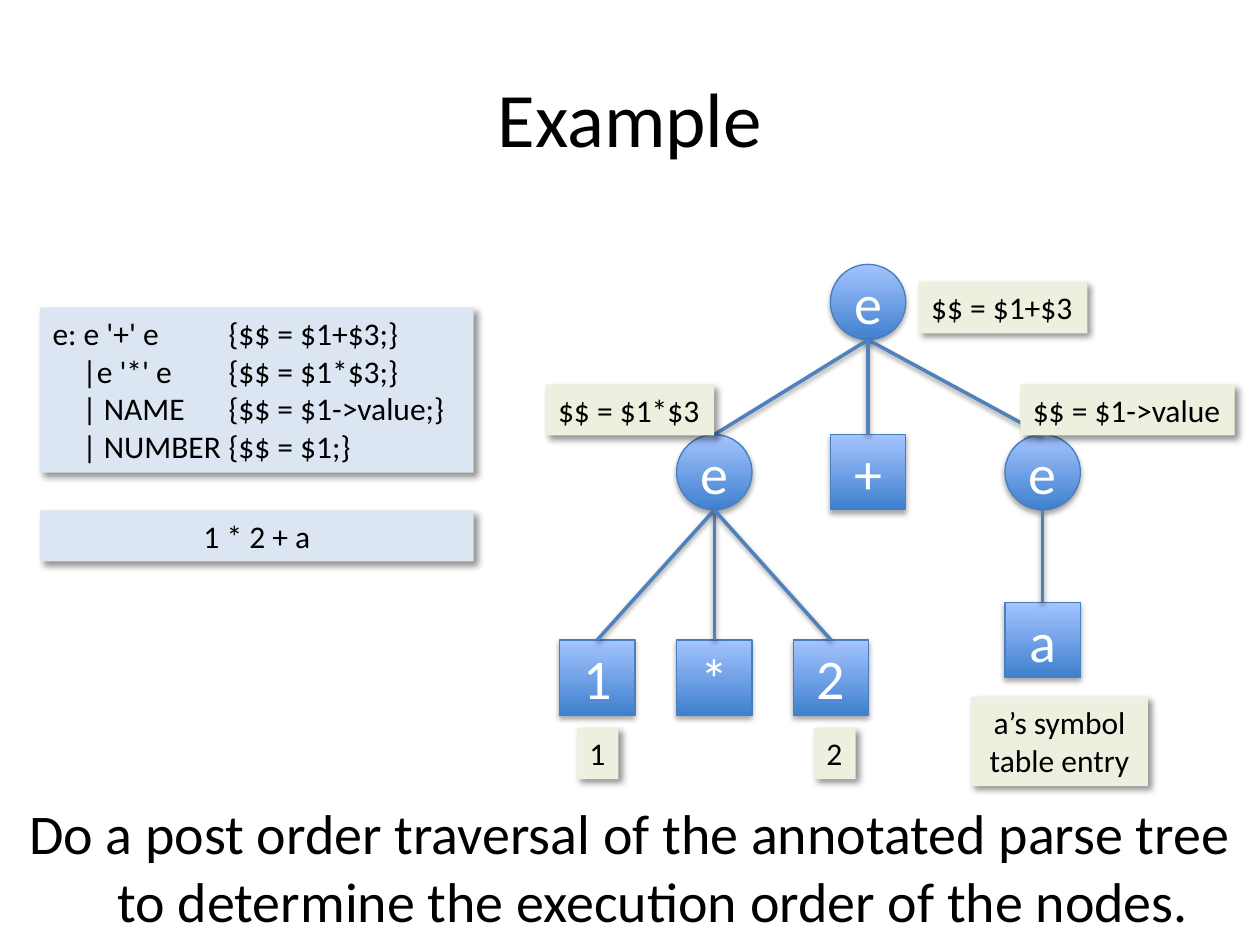
from dataclasses import dataclass

from lxml.etree import SubElement
from pptx import Presentation
from pptx.dml.color import RGBColor
from pptx.enum.shapes import MSO_CONNECTOR, MSO_SHAPE
from pptx.enum.text import MSO_ANCHOR, MSO_AUTO_SIZE, PP_ALIGN
from pptx.oxml.ns import qn
from pptx.util import Cm, Pt


@dataclass(frozen=True)
class Theme:
    font: str = "Calibri"
    title_size: float = 44
    large_size: float = 32
    small_size: float = 18
    dark: str = "000000"
    light: str = "FFFFFF"
    node_bottom: str = "3F80CE"
    node_top: str = "A4C4FF"
    node_line: str = "4B7EBC"
    edge: str = "4F81BD"
    panel: str = "DCE6F2"
    label: str = "EBF1DE"
    node_shadow: tuple = (35, 3.1, 1.8, 90)
    edge_shadow: tuple = (38, 3.1, 1.6, 90)
    card_shadow: tuple = (43, 4, 3, 45)


THEME = Theme()
NODE_SIZE = 1.52
CARD_HEIGHT = 1.03
TOP_SITE = 0


def set_attributes(target, values):
    for name, value in values.items():
        setattr(target, name, value)


def place(shape, left, top, width, height):
    set_attributes(shape, {"left": Cm(left), "top": Cm(top),
                           "width": Cm(width), "height": Cm(height)})


def add_shadow(shape, opacity, blur, distance, angle):
    effects = SubElement(shape._element.spPr, qn("a:effectLst"))
    shadow = SubElement(effects, qn("a:outerShdw"), {
        "blurRad": str(Pt(blur)), "dist": str(Pt(distance)),
        "dir": str(angle * 60000), "rotWithShape": "0"})
    color = SubElement(shadow, qn("a:srgbClr"), val=THEME.dark)
    SubElement(color, qn("a:alpha"), val=str(opacity * 1000))


def write(shape, lines, size, color, alignment, frame_format):
    frame = shape.text_frame
    set_attributes(frame, frame_format)
    for index, line in enumerate(lines):
        paragraph = frame.add_paragraph() if index else frame.paragraphs[0]
        paragraph.alignment = alignment
        run = paragraph.add_run()
        run.text = line
        set_attributes(run.font, {"name": THEME.font, "size": Pt(size)})
        run.font.color.rgb = RGBColor.from_string(color)
    return frame.paragraphs


def add_card(slide, box, lines, fill, alignment=PP_ALIGN.LEFT, wrap=False):
    shape = slide.shapes.add_shape(MSO_SHAPE.RECTANGLE, *map(Cm, box))
    shape.fill.solid()
    shape.fill.fore_color.rgb = RGBColor.from_string(fill)
    shape.line.fill.background()
    add_shadow(shape, *THEME.card_shadow)
    return write(shape, lines, THEME.small_size, THEME.dark, alignment, {
        "word_wrap": wrap, "vertical_anchor": MSO_ANCHOR.TOP,
        "auto_size": MSO_AUTO_SIZE.SHAPE_TO_FIT_TEXT})


def add_node(slide, center, top, text):
    kind = MSO_SHAPE.OVAL if text == "e" else MSO_SHAPE.RECTANGLE
    shape = slide.shapes.add_shape(kind, Cm(center - NODE_SIZE / 2), Cm(top),
                                   Cm(NODE_SIZE), Cm(NODE_SIZE))
    shape.fill.gradient()
    shape.fill.gradient_angle = 90
    for stop, color in zip(shape.fill.gradient_stops, (THEME.node_bottom, THEME.node_top)):
        stop.color.rgb = RGBColor.from_string(color)
    shape.line.color.rgb = RGBColor.from_string(THEME.node_line)
    shape.line.width = Pt(0.75)
    add_shadow(shape, *THEME.node_shadow)
    margins = {f"margin_{side}": 0 for side in ("left", "top", "right", "bottom")}
    write(shape, [text], THEME.large_size, THEME.light, PP_ALIGN.CENTER,
          {"word_wrap": False, "vertical_anchor": MSO_ANCHOR.MIDDLE, **margins})
    return shape


def add_edge(slide, parent, child):
    start_x, start_y = parent.left + parent.width // 2, parent.top + parent.height
    edge = slide.shapes.add_connector(MSO_CONNECTOR.STRAIGHT, start_x, start_y,
                                      start_x, child.top)
    edge.end_connect(child, TOP_SITE)
    edge.line.color.rgb = RGBColor.from_string(THEME.edge)
    edge.line.width = Pt(2)
    add_shadow(edge, *THEME.edge_shadow)


def add_title(slide, box):
    title = slide.shapes.title
    place(title, *box)
    write(title, ["Example"], THEME.title_size, THEME.dark, PP_ALIGN.CENTER,
          {"vertical_anchor": MSO_ANCHOR.MIDDLE})


def add_grammar(slide, left, top, width):
    rules = ["e: e '+' e\t{$$ = $1+$3;}",
             "\t|e '*' e\t{$$ = $1*$3;}",
             "\t| NAME\t{$$ = $1->value;}",
             "\t| NUMBER\t{$$ = $1;}"]
    for paragraph in add_card(slide, (left, top, width, 3.33), rules, THEME.panel):
        tabs = SubElement(paragraph._p.get_or_add_pPr(), qn("a:tabLst"))
        for position in (0.6, 3.55):
            SubElement(tabs, qn("a:tab"), pos=str(Cm(position)), algn="l")
    add_card(slide, (left, top + 4.09, width, CARD_HEIGHT), ["1 * 2 + a"],
             THEME.panel, PP_ALIGN.CENTER, True)


def add_parse_tree(slide, left, top):
    node_places = {
        "sum": (6.5, 0, "e"), "plus": (6.5, 3.43, "+"),
        "product": (3.4, 3.43, "e"), "variable": (10.02, 3.43, "e"),
        "name": (10.02, 6.81, "a"), "times": (3.4, 7.57, "*"),
        "one": (1.04, 7.57, "1"), "two": (5.75, 7.57, "2"),
    }
    nodes = {name: add_node(slide, left + center, top + offset, text)
             for name, (center, offset, text) in node_places.items()}
    children = {"sum": ("variable", "product", "plus"),
                "product": ("one", "times", "two"),
                "variable": ("name",)}
    for parent, names in children.items():
        for name in names:
            add_edge(slide, nodes[parent], nodes[name])

    labels = [(7.52, 0.36, 3.4, "$$ = $1+$3"),
              (0, 2.42, 3.4, "$$ = $1*$3"),
              (9.57, 2.42, 4.32, "$$ = $1->value"),
              (0.63, 9.35, 0.84, "1"),
              (5.41, 9.35, 0.84, "2")]
    for offset_x, offset_y, width, text in labels:
        add_card(slide, (left + offset_x, top + offset_y, width, CARD_HEIGHT),
                 [text], THEME.label)
    add_card(slide, (left + 8.58, top + 8.72, 3.56, 1.8),
             ["a’s symbol table entry"], THEME.label, PP_ALIGN.CENTER, True)


def add_conclusion(slide, box):
    text_box = slide.shapes.add_textbox(*map(Cm, box))
    paragraphs = write(
        text_box,
        ["Do a post order traversal of the annotated parse tree "
         "to determine the execution order of the nodes."],
        THEME.large_size, THEME.dark, PP_ALIGN.CENTER, {"word_wrap": True})
    properties = paragraphs[0]._p.get_or_add_pPr()
    properties.set("marL", str(Cm(0.95)))
    properties.set("indent", str(Cm(-0.95)))


def main():
    presentation = Presentation()
    set_attributes(presentation, {"slide_width": Cm(25.4), "slide_height": Cm(19.05)})
    slide = presentation.slides.add_slide(presentation.slide_layouts[5])
    add_title(slide, (1.27, 0.76, 22.86, 3.18))
    add_conclusion(slide, (0, 15.98, 25.4, 2.59))
    add_parse_tree(slide, 11, 5.33)
    add_grammar(slide, 0.81, 6.2, 8.74)
    presentation.save("out.pptx")


if __name__ == "__main__":
    main()
